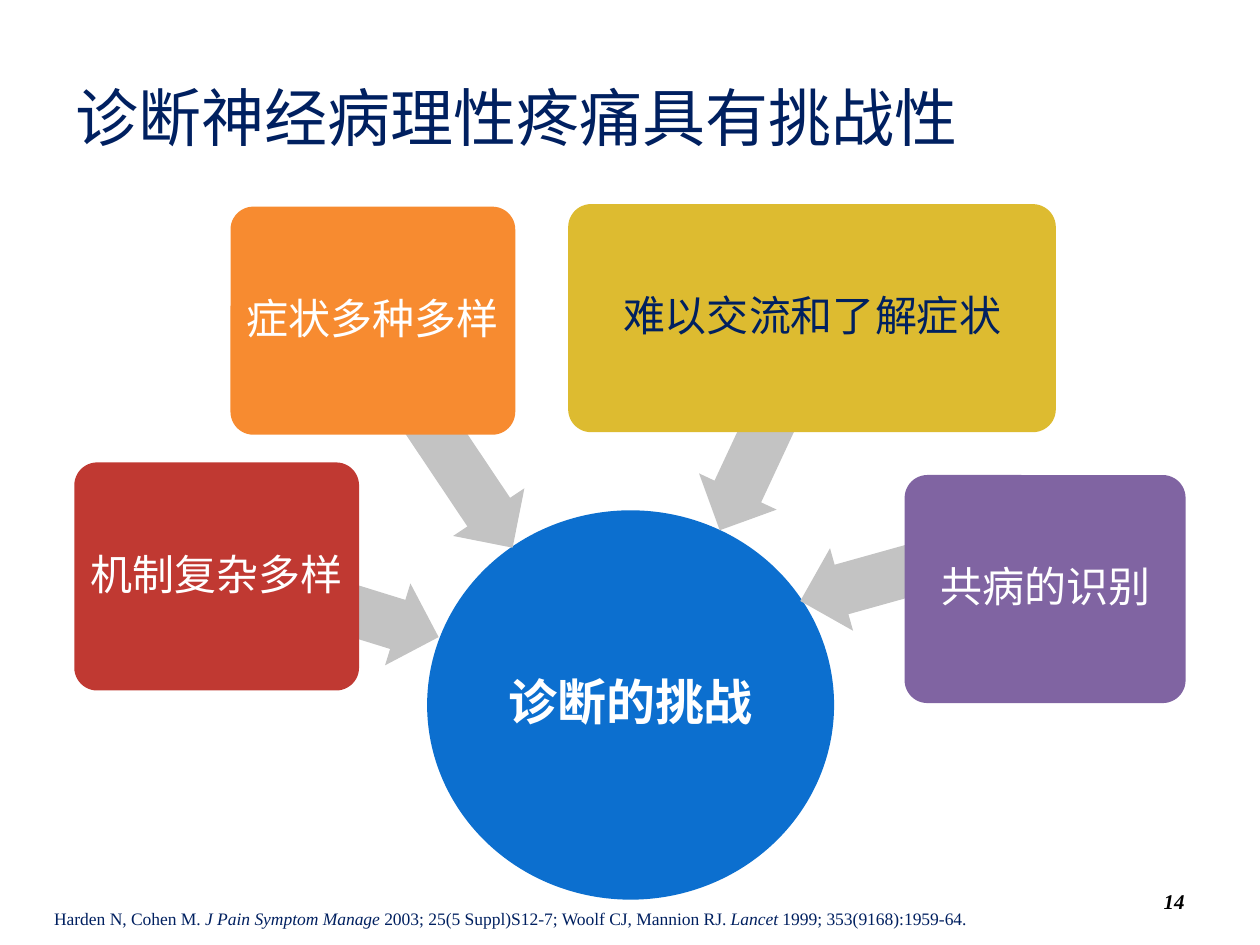
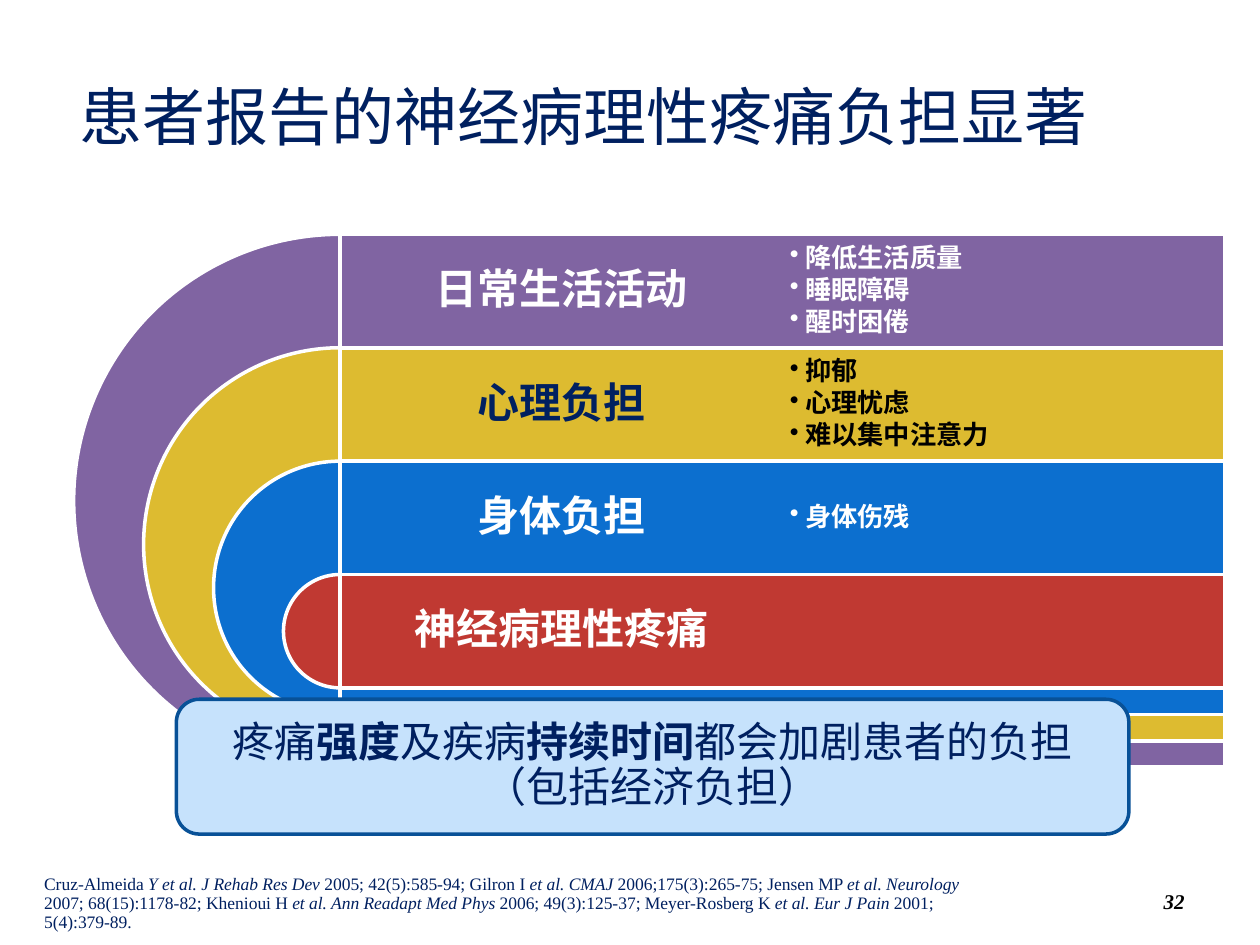
from dataclasses import dataclass
from typing import NamedTuple

from lxml import etree
from pptx import Presentation
from pptx.dml.color import RGBColor
from pptx.enum.lang import MSO_LANGUAGE_ID
from pptx.enum.shapes import MSO_SHAPE
from pptx.enum.text import MSO_ANCHOR, PP_ALIGN
from pptx.oxml.ns import qn
from pptx.shapes.autoshape import Shape
from pptx.slide import Slide
from pptx.util import Inches, Pt

ARROW, CHORD = MSO_SHAPE.LEFT_ARROW, MSO_SHAPE.CHORD
OVAL, RECT, ROUND = MSO_SHAPE.OVAL, MSO_SHAPE.RECTANGLE, MSO_SHAPE.ROUNDED_RECTANGLE
LEFT, MID, RIGHT = PP_ALIGN.LEFT, PP_ALIGN.CENTER, PP_ALIGN.RIGHT
TOP, CENTRE, BOTTOM = MSO_ANCHOR.TOP, MSO_ANCHOR.MIDDLE, MSO_ANCHOR.BOTTOM
CHINESE = MSO_LANGUAGE_ID.SIMPLIFIED_CHINESE


@dataclass(frozen=True)
class Theme:
    font: str = "Times New Roman"
    navy: str = "002060"
    white: str = "FFFFFF"
    black: str = "000000"
    blue: str = "0C6FCF"
    red: str = "C03932"
    orange: str = "F78B30"
    gold: str = "DDBB30"
    purple: str = "8064A2"
    grey: str = "C3C3C3"
    pale: str = "C6E2FC"
    edge: str = "085197"
    title: int = 36
    hub: int = 28
    label: int = 24
    point: int = 15
    page: int = 12
    source: int = 10


THEME = Theme()


class Place(NamedTuple):
    left: float
    top: float
    width: float
    height: float


@dataclass(frozen=True)
class Style:
    size: int
    color: str = THEME.navy
    bold: bool = False
    italic: bool = False
    align: PP_ALIGN = LEFT
    anchor: MSO_ANCHOR = CENTRE
    inset: float = 0
    space: float = 1
    after: int = 0


class Cause(NamedTuple):
    text: str
    place: Place
    fill: str
    color: str
    arrow: Place
    turn: float


class Layer(NamedTuple):
    text: str
    fill: str
    color: str
    ink: str
    points: list[str]


PAGE = Place(7.17, 6.95, 2.33, 0.4)
HUB = Place(3.39, 4.05, 3.23, 3.09)

CAUSES = [
    Cause("机制复杂多样", Place(0.59, 3.67, 2.26, 1.81), THEME.red, THEME.white,
          Place(1.79, 4.46, 1.73, 0.68), 197.2),
    Cause("症状多种多样", Place(1.83, 1.64, 2.26, 1.81), THEME.orange, THEME.white,
          Place(2.52, 3.18, 1.99, 0.68), 236.2),
    Cause("难以交流和了解症状", Place(4.51, 1.62, 3.87, 1.81), THEME.gold, THEME.navy,
          Place(5.21, 3.08, 1.74, 0.68), 295),
    Cause("共病的识别", Place(7.18, 3.77, 2.23, 1.81), THEME.purple, THEME.white,
          Place(6.32, 4.2, 1.71, 0.68), 344.4),
]

LAYERS = [
    Layer("日常生活活动", THEME.purple, THEME.white, THEME.white,
          ["降低生活质量", "睡眠障碍", "醒时困倦"]),
    Layer("心理负担", THEME.gold, THEME.navy, THEME.black,
          ["抑郁", "心理忧虑", "难以集中注意力"]),
    Layer("身体负担", THEME.blue, THEME.white, THEME.white, ["身体伤残"]),
    Layer("神经病理性疼痛", THEME.red, THEME.white, THEME.white, []),
]

# Every second part of these lists is stressed.
PAIN_REFS = ["Harden N, Cohen M. ", "J Pain Symptom Manage",
             " 2003; 25(5 Suppl)S12-7; Woolf CJ, Mannion RJ. ", "Lancet",
             " 1999; 353(9168):1959-64."]
LOAD_REFS = ["Cruz-Almeida ", "Y et al. J Rehab Res Dev ",
             "2005; 42(5):585-94; Gilron I ", "et al. CMAJ ",
             "2006;175(3):265-75; Jensen MP ", "et al. Neurology ",
             "2007; 68(15):1178-82; Khenioui H ", "et al. Ann Readapt Med Phys",
             " 2006; 49(3):125-37; Meyer-Rosberg K", " et al. Eur J Pain",
             " 2001; 5(4):379-89."]
CLAIM = ["疼痛", "强度", "及疾病", "持续时间", "都会加剧患者的负担（包括经济负担）"]


def paint(color: str) -> RGBColor:
    return RGBColor.from_string(color)


def dress(shape: Shape, style: Style) -> None:
    """Format the frame, paragraphs and runs of a shape that has its text."""
    frame = shape.text_frame
    frame.word_wrap = True
    frame.vertical_anchor = style.anchor
    frame.margin_left = frame.margin_right = Inches(style.inset)
    frame.margin_top = frame.margin_bottom = Inches(style.inset)
    for para in frame.paragraphs:
        para.alignment = style.align
        para.line_spacing = style.space
        para.space_after = Pt(style.after)
        for run in para.runs:
            font = run.font
            font.name = THEME.font
            font.size = Pt(style.size)
            font.color.rgb = paint(style.color)
            font.bold = style.bold
            font.italic = style.italic
            font.language_id = CHINESE


def add_runs(shape: Shape, parts: list[str], style: Style, mark: str) -> None:
    """Write parts in turn plain and stressed; mark is "bold" or "italic"."""
    para = shape.text_frame.paragraphs[0]
    for part in parts:
        para.add_run().text = part
    dress(shape, style)
    for run in para.runs[1::2]:
        setattr(run.font, mark, True)


def add_box(slide: Slide, place: Place) -> Shape:
    return slide.shapes.add_textbox(*map(Inches, place))


def add_text(slide: Slide, place: Place, text: str, style: Style) -> Shape:
    box = add_box(slide, place)
    box.text_frame.text = text
    dress(box, style)
    return box


def add_form(slide: Slide, kind: MSO_SHAPE, place: Place, fill: str,
             line: str = "", adjust: tuple[float, ...] = ()) -> Shape:
    form = slide.shapes.add_shape(kind, *map(Inches, place))
    form.shadow.inherit = False
    form.fill.solid()
    form.fill.fore_color.rgb = paint(fill)
    if line:
        form.line.color.rgb = paint(line)
        form.line.width = Pt(2)
    else:
        form.line.fill.background()
    for i, value in enumerate(adjust):
        form.adjustments[i] = value
    return form


def add_points(slide: Slide, place: Place, points: list[str], color: str) -> None:
    box = add_box(slide, place)
    box.text_frame.text = "\n".join(points)
    for para in box.text_frame.paragraphs:
        props = para._p.get_or_add_pPr()
        props.set("marL", str(Inches(0.12)))
        props.set("indent", str(-Inches(0.12)))
        etree.SubElement(props, qn("a:buChar")).set("char", "•")
    dress(box, Style(THEME.point, color, bold=True, inset=0.06, space=0.9, after=2))


def start(deck: Presentation, title: str, place: Place, page: int) -> Slide:
    """Add a slide with its title and page number."""
    slide = deck.slides.add_slide(deck.slide_layouts[5])
    head = slide.shapes.title
    head.left, head.top, head.width, head.height = map(Inches, place)
    head.text_frame.text = title
    dress(head, Style(THEME.title, inset=0.1))
    add_text(slide, PAGE, str(page),
             Style(THEME.page, THEME.black, True, True, RIGHT, inset=0.1))
    return slide


def draw_causes(deck: Presentation) -> None:
    slide = start(deck, "诊断神经病理性疼痛具有挑战性", Place(0.5, 0.3, 9, 1.25), 14)
    refs = add_box(slide, Place(0.43, 7.2, 9.06, 0.17))
    add_runs(refs, PAIN_REFS, Style(THEME.source, anchor=BOTTOM), "italic")
    hub = add_form(slide, OVAL, HUB, THEME.blue)
    hub.text_frame.text = "诊断的挑战"
    dress(hub, Style(THEME.hub, THEME.white, True, align=MID, inset=0.02, space=0.9))
    for cause in CAUSES:
        arrow = add_form(slide, ARROW, cause.arrow, THEME.grey, adjust=(0.6, 0.5))
        arrow.rotation = cause.turn
        card = add_form(slide, ROUND, cause.place, cause.fill, adjust=(0.1,))
        card.text_frame.text = cause.text
        dress(card, Style(THEME.label, cause.color, align=MID, inset=0.02, space=0.9))


def draw_load(deck: Presentation) -> None:
    slide = start(deck, "患者报告的神经病理性疼痛负担显著", Place(0.53, 0.29, 9.07, 1.25), 32)
    axis, top, row, half = 2.7, 1.86, 0.9, 3.51
    for i, layer in enumerate(LAYERS):
        y = top + row * i
        size = row + 1.11 * (len(LAYERS) - 1 - i)
        disc = Place(axis - size / 2, y, size, size)
        add_form(slide, CHORD, disc, layer.fill, THEME.white, (54, 162))
        band = Place(axis, y, 2 * half, size)
        add_form(slide, RECT, band, layer.fill, THEME.white)
        add_text(slide, Place(axis, y, half, row), layer.text,
                 Style(THEME.label, layer.color, True, align=MID, inset=0.1, space=0.9))
        if layer.points:
            add_points(slide, Place(axis + half, y, half, row), layer.points, layer.ink)
    refs = add_box(slide, Place(0.35, 6.95, 7.48, 0.45))
    add_runs(refs, LOAD_REFS, Style(THEME.source, anchor=TOP, space=0.9), "italic")
    claim = add_form(slide, ROUND, Place(1.4, 5.55, 7.56, 1.07), THEME.pale,
                     THEME.edge, (0.17,))
    add_runs(claim, CLAIM, Style(THEME.label, align=MID, inset=0.1, space=0.9), "bold")


def main() -> None:
    deck = Presentation()
    deck.slide_width, deck.slide_height = Inches(10), Inches(7.5)
    draw_causes(deck)
    draw_load(deck)
    deck.save("out.pptx")


if __name__ == "__main__":
    main()
